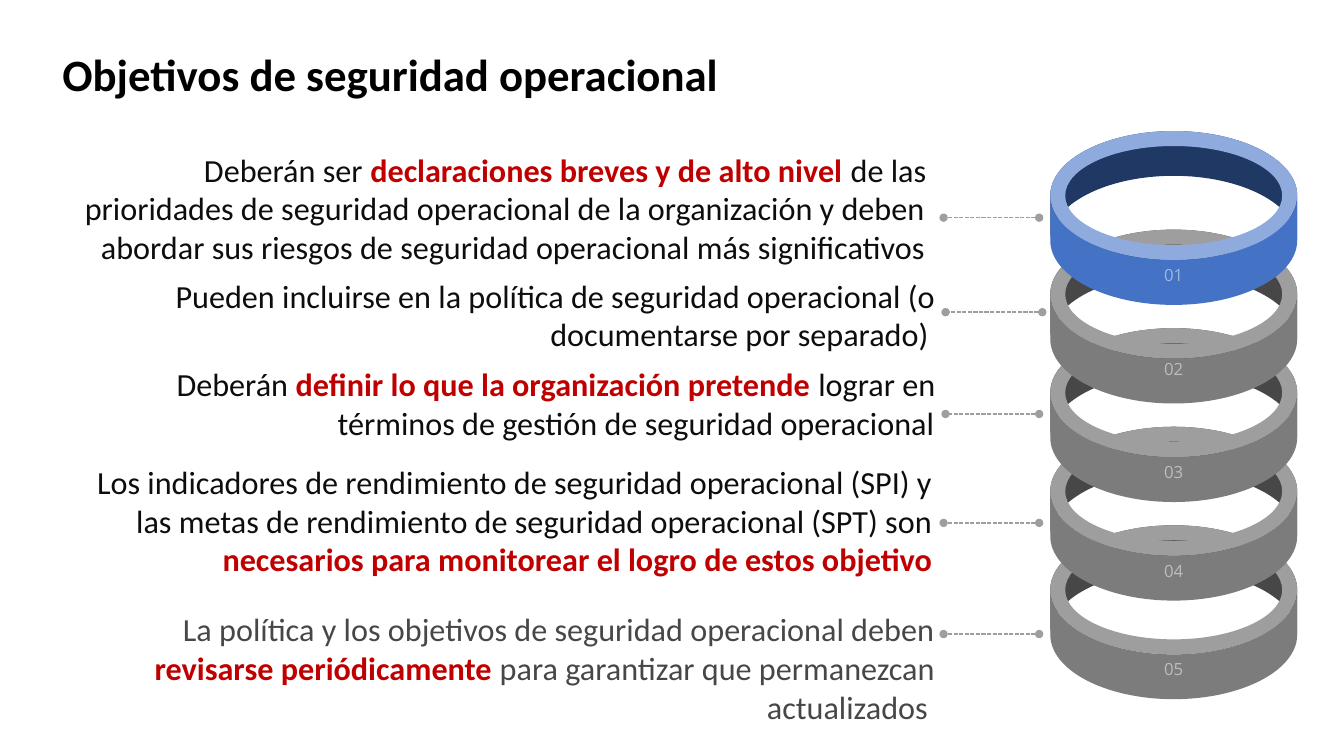
from math import cos, pi, sin, tan

from lxml.etree import SubElement
from pptx import Presentation
from pptx.dml.color import RGBColor
from pptx.enum.dml import MSO_LINE_DASH_STYLE as Dash
from pptx.enum.shapes import MSO_CONNECTOR as Connector
from pptx.enum.text import MSO_ANCHOR as Anchor, MSO_AUTO_SIZE as AutoSize, PP_ALIGN as Align
from pptx.oxml.ns import qn
from pptx.util import Pt

COLORS = {
    "title": "000000", "text": "0D0D0D", "muted": "474747", "strong": "C00000",
    "line": "9E9E9E", "number": "FFFFFF",
}
GRAY_RING = {"back": "474747", "rim": "9E9E9E", "front": "7C7C7C"}
BLUE_RING = {"back": "203864", "rim": "8FAADC", "front": "4472C4"}

BODY = {"name": "Calibri", "size": Pt(23), "bold": False}
STRONG = {**BODY, "bold": True}
TITLE = {"name": "Calibri", "size": Pt(32), "bold": True}
NUMBER = {"name": "Open Sans", "size": Pt(12), "bold": False}

TEXT_LEFT = 37.4
RING_BOX = (750.2, 93.6, 176.4, 92.2)
RING_PITCH, RING_DEPTH, RIM = 70.4, 32, 10.7

OBJECTIVES = [
    {"box": (103.7, 631.4, 82.1), "line": (674, 742.3, 155.5), "inset": 35, "ring": BLUE_RING,
     "spans": [("Deberán ser ", "text"),
               ("declaraciones breves y de alto nivel ", "strong"),
               ("de las prioridades de seguridad operacional de la organización y deben "
                "abordar sus riesgos de seguridad operacional más significativos", "text")]},
    {"box": (193.7, 638.6, 51.8), "line": (675.4, 744.5, 223), "inset": 29, "ring": GRAY_RING,
     "spans": [("Pueden incluirse en la política de seguridad operacional "
                "(o documentarse por separado) ", "text")]},
    {"box": (257, 637.9, 70.6), "line": (675.4, 742.3, 295.7), "inset": 35, "ring": GRAY_RING,
     "spans": [("Deberán ", "text"),
               ("definir lo que la organización pretende ", "strong"),
               ("lograr en términos de gestión de seguridad operacional", "text")]},
    {"box": (326.9, 636.5, 93.6), "line": (674, 742.3, 373.5), "inset": 35, "ring": GRAY_RING,
     "spans": [("Los indicadores de rendimiento de seguridad operacional (SPI) y las metas "
                "de rendimiento de seguridad operacional (SPT) son ", "text"),
               ("necesarios para monitorear el logro de estos objetivo", "strong")]},
    {"box": (432, 637.9, 92.2), "line": (674, 742.3, 452.9), "inset": 35, "ring": GRAY_RING,
     "spans": [("La política y los objetivos de seguridad operacional deben ", "muted"),
               ("revisarse periódicamente ", "strong"),
               ("para garantizar que permanezcan actualizados ", "muted")]},
]


def set_all(target, values):
    for name, value in values.items():
        setattr(target, name, value)


def add_span(para, text, color, style):
    span = para.add_run()
    span.text = text
    set_all(span.font, style)
    span.font.color.rgb = RGBColor.from_string(COLORS[color])
    return span


def add_title(page, box):
    title = page.shapes.title
    set_all(title, dict(zip(("left", "top", "width", "height"), map(Pt, box))))
    set_all(title.text_frame, {"vertical_anchor": Anchor.BOTTOM, "word_wrap": True,
                               "auto_size": AutoSize.NONE})
    para = title.text_frame.paragraphs[0]
    set_all(para, {"alignment": Align.LEFT, "line_spacing": 0.9})
    add_span(para, "Objetivos de seguridad operacional", "title", TITLE)


def arc(box, start, quarters, drop=0, inset=0):
    left, top, width, height = box
    turn = pi / 2 if quarters > 0 else -pi / 2
    pull = 4 / 3 * tan(turn / 4)
    units = [(cos(start), sin(start))]
    for quarter in range(abs(quarters)):
        begin = start + quarter * turn
        end = begin + turn
        units += [(cos(begin) - pull * sin(begin), sin(begin) + pull * cos(begin)),
                  (cos(end) + pull * sin(end), sin(end) - pull * cos(end)),
                  (cos(end), sin(end))]
    return [(Pt(left + width / 2 + (width / 2 - inset) * x),
             Pt(top + height / 2 + drop + (height / 2 - inset) * y)) for x, y in units]


def wall(box, start, quarters):
    upper = arc(box, start, quarters)
    lower = arc(box, start, quarters, RING_DEPTH)[::-1]
    return upper + [lower[0]] * 2 + lower


def add_outline(page, contours, color):
    first, *others = contours
    builder = page.shapes.build_freeform(*first[0])
    builder.add_line_segments(first[1:])
    for contour in others:
        builder.move_to(*contour[0])
        builder.add_line_segments(contour[1:])
    shape = builder.convert_to_shape()
    segments = iter(list(shape._element.iter(qn("a:lnTo"))))
    for curve, *rest in zip(segments, segments, segments):
        curve.tag = qn("a:cubicBezTo")
        for segment in rest:
            curve.append(segment[0])
            segment.getparent().remove(segment)
    shape.shadow.inherit = False
    shape.fill.solid()
    shape.fill.fore_color.rgb = RGBColor.from_string(color)
    shape.line.fill.background()
    return shape


def add_ring(page, box, colors, number, inset):
    rim = [arc(box, 0, 4), arc(box, 0, -4, inset=RIM)]
    add_outline(page, [wall(box, 0, -2)], colors["back"])
    add_outline(page, rim, colors["rim"])
    band = add_outline(page, [wall(box, 0, 2)], colors["front"])
    set_all(band.text_frame, {"margin_left": 0, "margin_right": 0, "margin_top": Pt(inset),
                              "margin_bottom": 0, "vertical_anchor": Anchor.MIDDLE,
                              "word_wrap": True})
    para = band.text_frame.paragraphs[0]
    para.alignment = Align.CENTER
    span = add_span(para, number, "number", NUMBER)
    for color in span._r.iter(qn("a:srgbClr")):
        SubElement(color, qn("a:alpha"), val="50000")


def add_statement(page, box, spans):
    frame = page.shapes.add_textbox(*map(Pt, box)).text_frame
    set_all(frame, {"word_wrap": True, "vertical_anchor": Anchor.TOP})
    para = frame.paragraphs[0]
    para.alignment = Align.RIGHT
    for text, color in spans:
        add_span(para, text, color, STRONG if color == "strong" else BODY)


def add_dotted_line(page, left, right, y):
    line = page.shapes.add_connector(Connector.STRAIGHT, Pt(right), Pt(y), Pt(left), Pt(y))
    set_all(line.line, {"width": Pt(1), "dash_style": Dash.SQUARE_DOT})
    line.line.color.rgb = RGBColor.from_string(COLORS["line"])
    outline = line._element.spPr.find(qn("a:ln"))
    for end in ("a:headEnd", "a:tailEnd"):
        SubElement(outline, qn(end), type="oval")
    SubElement(line._element.spPr, qn("a:effectLst"))


def add_objectives(page, ring_box):
    left, top, width, height = ring_box
    for index, item in reversed(list(enumerate(OBJECTIVES))):
        box = (left, top + index * RING_PITCH, width, height)
        add_ring(page, box, item["ring"], f"{index + 1:02}", item["inset"])
    for item in OBJECTIVES:
        add_statement(page, (TEXT_LEFT, *item["box"]), item["spans"])
        add_dotted_line(page, *item["line"])


def main():
    deck = Presentation()
    set_all(deck, {"slide_width": Pt(960), "slide_height": Pt(540)})
    page = deck.slides.add_slide(deck.slide_layouts[5])
    add_title(page, (TEXT_LEFT, 13.7, 889.2, 61.9))
    add_objectives(page, RING_BOX)
    deck.save("out.pptx")


if __name__ == "__main__":
    main()
